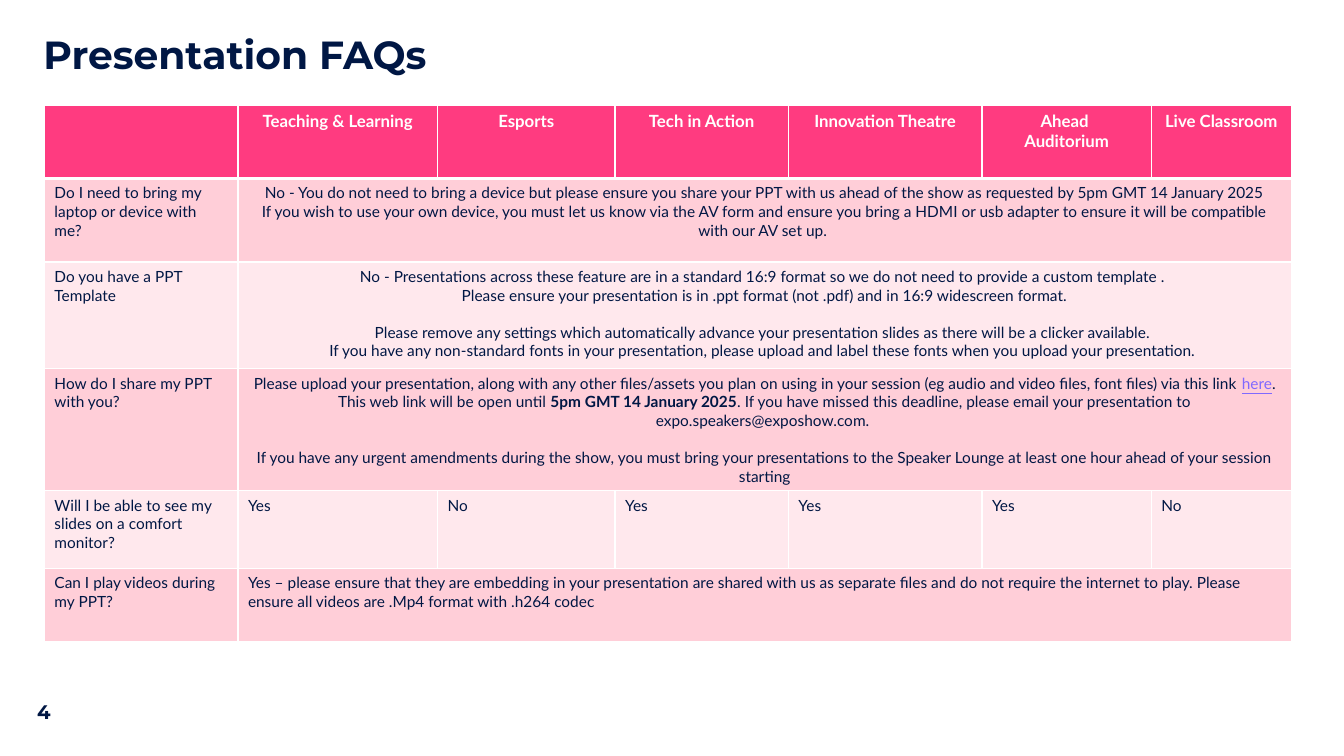
"""Build the presentation FAQ slide with its table of answers per stage."""
from dataclasses import dataclass

from lxml.etree import SubElement
from pptx import Presentation
from pptx.dml.color import RGBColor
from pptx.enum.text import MSO_ANCHOR, MSO_AUTO_SIZE, PP_ALIGN
from pptx.oxml.ns import qn
from pptx.util import Inches, Pt


@dataclass(frozen=True)
class Theme:
    navy: str = "001744"
    white: str = "FFFFFF"
    pink: str = "FF3B80"
    rose: str = "FFCED8"
    blush: str = "FFE8ED"
    link: str = "8069FF"
    heading_font: str = "Montserrat"
    body_font: str = "Lato"
    title_size: int = 28
    number_size: int = 14
    header_size: int = 12
    body_size: int = 11


THEME = Theme()


def style(para, font, size, color, bold=False, align=PP_ALIGN.LEFT):
    para.alignment = align
    para.font.name = font
    para.font.size = Pt(size)
    para.font.bold = bold
    para.font.color.rgb = RGBColor.from_string(color)


def add_border(cell, side, width):
    line = SubElement(cell._tc.get_or_add_tcPr(), qn(f"a:ln{side}"), w=str(Pt(width)))
    fill = SubElement(line, qn("a:solidFill"))
    SubElement(fill, qn("a:srgbClr"), val=THEME.white)


deck = Presentation()
deck.slide_width = Inches(13.33)
deck.slide_height = Inches(7.5)
page = deck.slides.add_slide(deck.slide_layouts[5])

title = page.shapes.title
title.left, title.top, title.width, title.height = (
    Inches(0.33), Inches(0.3), Inches(7.92), Inches(0.62))
title.text_frame.text = "Presentation FAQs"
title.text_frame.vertical_anchor = MSO_ANCHOR.TOP
title.text_frame.auto_size = MSO_AUTO_SIZE.NONE
title_para = title.text_frame.paragraphs[0]
title_para.line_spacing = 0.9
style(title_para, THEME.heading_font, THEME.title_size, THEME.navy, bold=True)

column_widths = [1.92, 1.98, 1.76, 1.72, 1.92, 1.68, 1.39]
row_heights = [0.72, 0.83, 1.06, 1.19, 0.77, 0.73]
upload_note = [
    ("Please upload your presentation, along with any other files/assets you plan on using "
     "in your session (eg audio and video files, font files) via this link ", None),
    ("here", "link"),
    (". This web link will be open until ", None),
    ("5pm GMT 14 January 2025", "bold"),
    (". If you have missed this deadline, please email your presentation to "
     "expo.speakers@exposhow.com. ", None),
]
faq_rows = [
    [[], ["Teaching & Learning"], ["Esports"], ["Tech in Action"], ["Innovation Theatre"],
     ["Ahead ", "Auditorium"], ["Live Classroom"]],
    [["Do I need to bring my laptop or device with me?"],
     ["No - You do not need to bring a device but please ensure you share your PPT with us "
      "ahead of the show as requested by 5pm GMT 14 January 2025",
      "If you wish to use your own device, you must let us know via the AV form and ensure "
      "you bring a HDMI or usb adapter to ensure it will be compatible with our AV set up. "]],
    [["Do you have a PPT Template"],
     ["No - Presentations across these feature are in a standard 16:9 format so we do not "
      "need to provide a custom template . ",
      "Please ensure your presentation is in .ppt format (not .pdf) and in 16:9 widescreen "
      "format.",
      "Please remove any settings which automatically advance your presentation slides as "
      "there will be a clicker available. ",
      "If you have any non-standard fonts in your presentation, please upload and label "
      "these fonts when you upload your presentation. "]],
    [["How do I share my PPT with you?"],
     [upload_note,
      "If you have any urgent amendments during the show, you must bring your presentations "
      "to the Speaker Lounge at least one hour ahead of your session starting"]],
    [["Will I be able to see my slides on a comfort monitor?"],
     ["Yes"], ["No"], ["Yes"], ["Yes"], ["Yes"], ["No"]],
    [["Can I play videos during my PPT?"],
     ["Yes – please ensure that they are embedding in your presentation are shared with us "
      "as separate files and do not require the internet to play. Please ensure all videos "
      "are .Mp4 format with .h264 codec"]],
]
centred_rows = {0, 1, 2, 3}
gap_before = {(2, 2), (3, 1)}

table = page.shapes.add_table(
    len(row_heights), len(column_widths), Inches(0.44), Inches(1.05),
    Inches(sum(column_widths)), Inches(sum(row_heights))).table
table.first_row = False
table.horz_banding = False
for column, width in zip(table.columns, column_widths):
    column.width = Inches(width)

for row_index, (height, answers) in enumerate(zip(row_heights, faq_rows)):
    table.rows[row_index].height = Inches(height)
    is_header = row_index == 0
    row_fill = THEME.pink if is_header else (THEME.blush, THEME.rose)[row_index % 2]
    for cell in table.rows[row_index].cells:
        for side in "LRTB":
            thick = (row_index, side) in {(0, "B"), (1, "T")}
            add_border(cell, side, 3 if thick else 1)
        cell.fill.solid()
        cell.fill.fore_color.rgb = RGBColor.from_string(row_fill)
    if len(answers) == 2:
        table.cell(row_index, 1).merge(table.cell(row_index, len(column_widths) - 1))

    for column_index, paragraphs in enumerate(answers):
        frame = table.cell(row_index, column_index).text_frame
        centred = column_index > 0 and row_index in centred_rows
        for para_index, content in enumerate(paragraphs):
            para = frame.paragraphs[0] if para_index == 0 else frame.add_paragraph()
            style(para, THEME.body_font,
                  THEME.header_size if is_header else THEME.body_size,
                  THEME.white if is_header else THEME.navy, bold=is_header,
                  align=PP_ALIGN.CENTER if centred else PP_ALIGN.LEFT)
            if column_index == 1 and (row_index, para_index) in gap_before:
                para.space_before = Pt(13.2)
            for text, emphasis in [(content, None)] if isinstance(content, str) else content:
                span = para.add_run()
                span.text = text
                if emphasis == "bold":
                    span.font.bold = True
                elif emphasis == "link":
                    span.font.underline = True
                    span.font.color.rgb = RGBColor.from_string(THEME.link)

number_box = page.shapes.add_textbox(Inches(0.27), Inches(6.89), Inches(0.45), Inches(0.34))
number_box.text_frame.word_wrap = True
number_box.text_frame.text = "4"
style(number_box.text_frame.paragraphs[0], THEME.heading_font, THEME.number_size,
      THEME.navy, bold=True)

deck.save("out.pptx")
